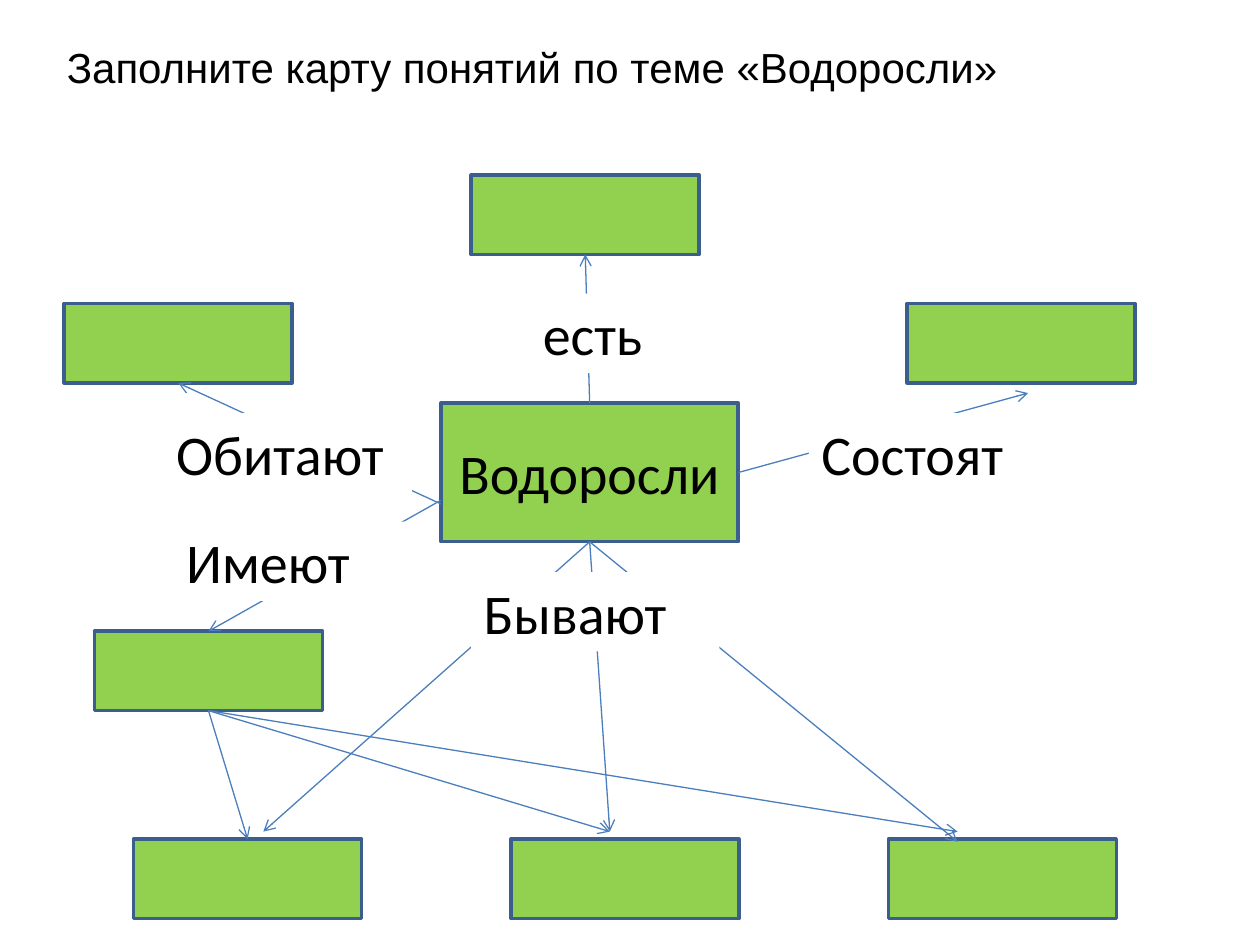
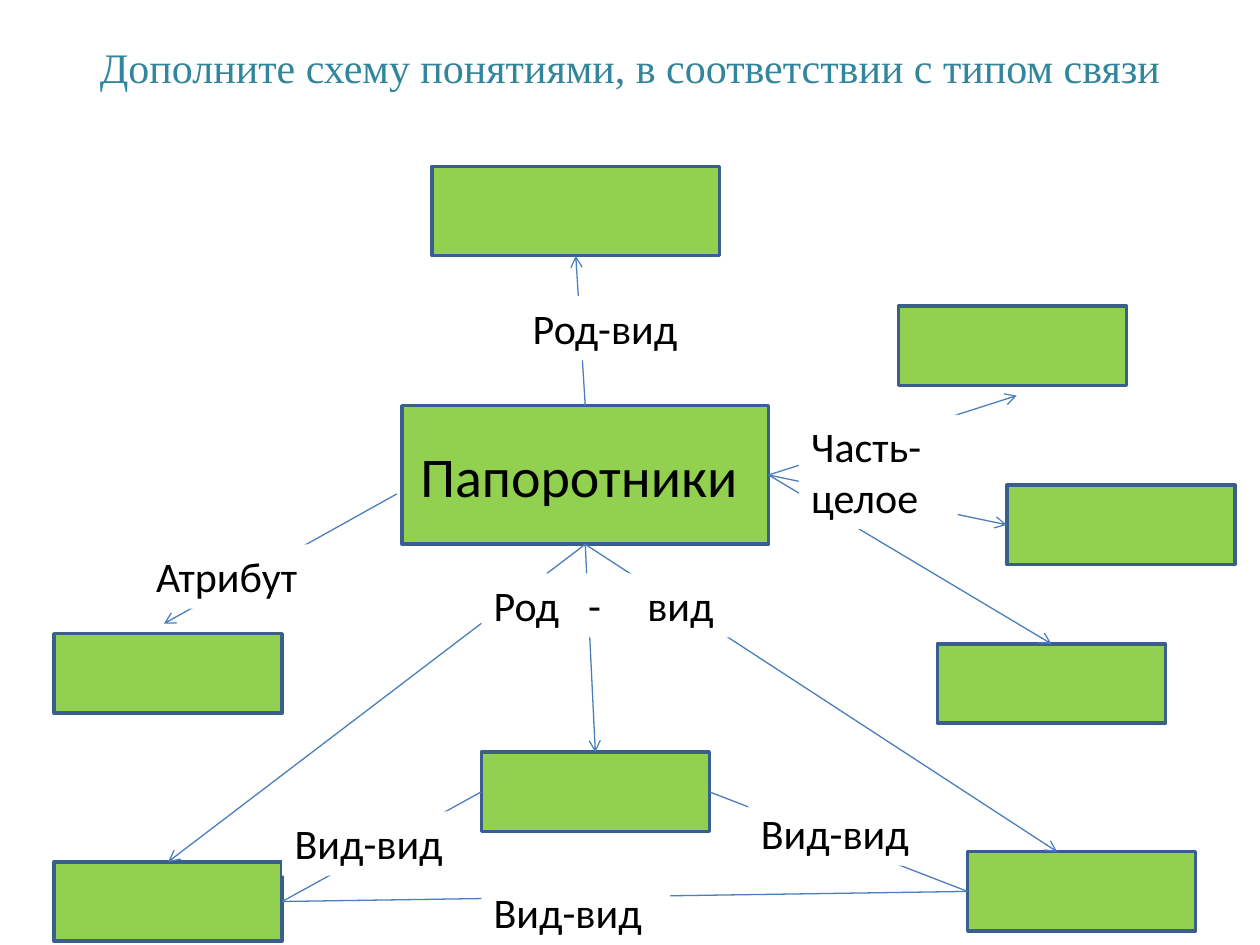
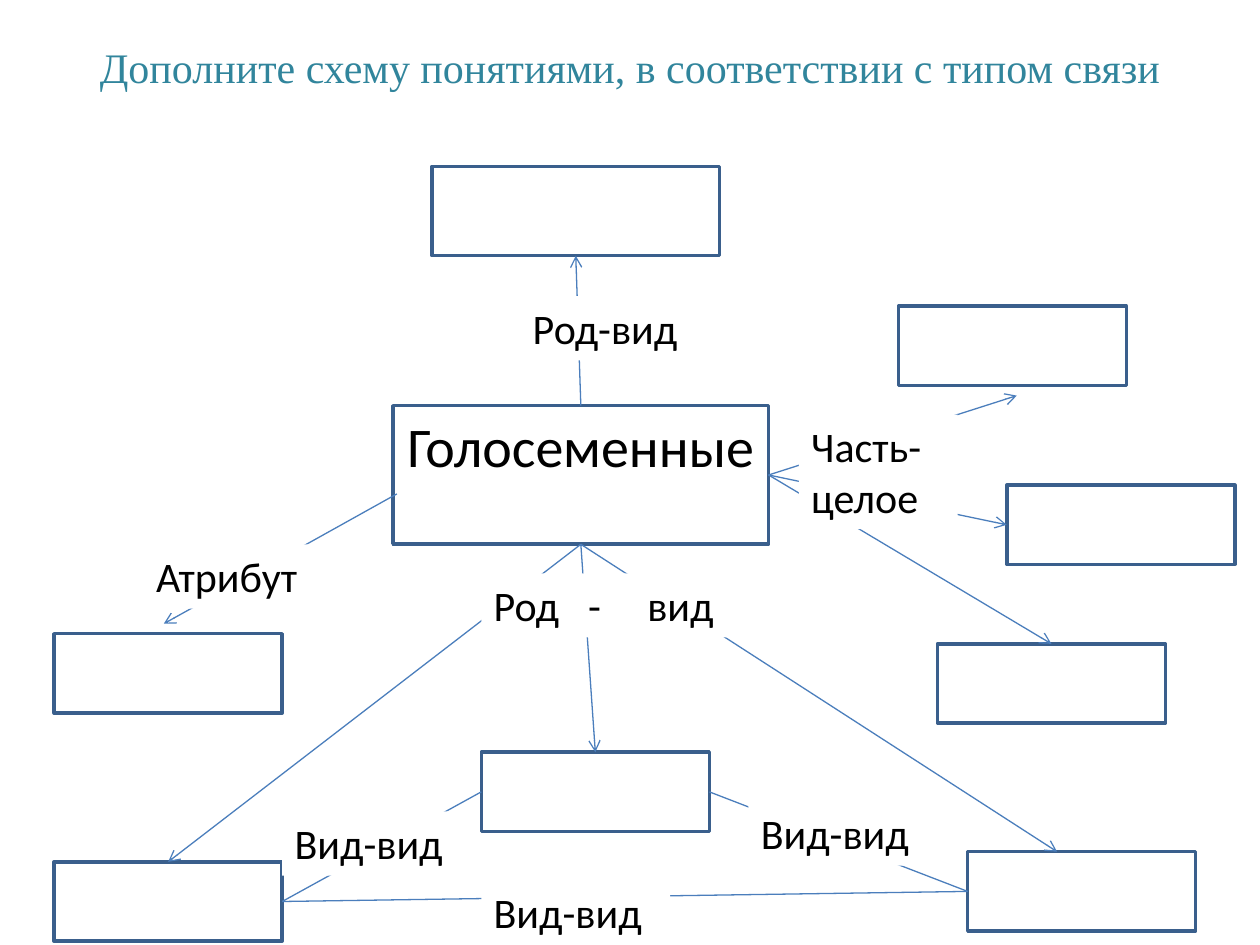
from lxml import etree
from pptx import Presentation
from pptx import util as u
from pptx.dml.color import RGBColor
from pptx.enum import shapes, text
from pptx.oxml import ns

COLORS = {"green": "92D050", "white": "FFFFFF", "border": "3A5F8C",
          "link": "4B7EBC", "black": "000000", "teal": "31859C"}
BOX = (1.81, 0.63)          # usual size of a concept box
TOP, LEFT, BOTTOM, RIGHT = range(4)
TAB_STOPS = (0.75, 1.22)    # gaps inside a spread-out label


def add_rectangle(slide, place, fill, border=None, words="", size=32,
                  align=text.PP_ALIGN.LEFT, anchor=text.MSO_ANCHOR.TOP):
    shape = slide.shapes.add_shape(shapes.MSO_SHAPE.RECTANGLE, *map(u.Inches, place))
    shape.shadow.inherit = False
    shape.fill.solid()
    shape.fill.fore_color.rgb = RGBColor.from_string(COLORS[fill])
    if border:
        shape.line.color.rgb = RGBColor.from_string(COLORS[border])
        shape.line.width = u.Pt(2)
    else:
        shape.line.fill.background()
    if words:
        shape.text_frame.word_wrap = True
        shape.text_frame.vertical_anchor = anchor
        paragraph = shape.text_frame.paragraphs[0]
        paragraph.alignment = align
        run = paragraph.add_run()
        run.text = words
        run.font.name, run.font.size = "Calibri", u.Pt(size)
        run.font.color.rgb = RGBColor.from_string(COLORS["black"])
        if "\t" in words:
            properties = paragraph._p.get_or_add_pPr()
            tabs = etree.SubElement(properties, ns.qn("a:tabLst"))
            for stop in TAB_STOPS:
                etree.SubElement(tabs, ns.qn("a:tab"), pos=str(u.Inches(stop)), algn="l")
    return shape


def add_link(slide, boxes, start, end, arrow=True):
    """An end is either a (box name, side) pair or an (x, y) point in inches."""
    joined = [isinstance(point[0], str) for point in (start, end)]
    first, last = [(0, 0) if is_joined else point
                   for is_joined, point in zip(joined, (start, end))]
    connector = slide.shapes.add_connector(
        shapes.MSO_CONNECTOR.STRAIGHT, *map(u.Inches, (*first, *last)))
    if joined[0]:
        connector.begin_connect(boxes[start[0]], start[1])
    if joined[1]:
        connector.end_connect(boxes[end[0]], end[1])
    connector.line.color.rgb = RGBColor.from_string(COLORS["link"])
    connector.line.width = u.Pt(0.75)
    if arrow:
        etree.SubElement(connector.line._get_or_add_ln(), ns.qn("a:tailEnd"), type="arrow")
    etree.SubElement(connector._element.spPr, ns.qn("a:effectLst"))


# Concept map of the first slide
algae_boxes = {"is": (3.74, 1.39, *BOX), "consist": (7.2, 2.41, *BOX),
               "live": (0.51, 2.41, *BOX), "have": (0.75, 5.01, *BOX)}
for column in range(3):
    algae_boxes[f"kind {column}"] = (1.06 + 2.995 * column, 6.66, *BOX)
algae_links = [
    (("hub", TOP), ("is", BOTTOM)),
    (("hub", BOTTOM), (2.09, 6.6)),
    (("hub", BOTTOM), (4.84, 6.6)),
    (("hub", BOTTOM), (7.6, 6.68)),
    ((3.5, 4), ("live", BOTTOM)),
    (("hub", RIGHT), (8.16, 3.12)),
    ((3.5, 3.97), ("have", TOP)),
    (("have", BOTTOM), (7.6, 6.6)),
    (("have", BOTTOM), (4.84, 6.6)),
    (("have", BOTTOM), ("kind 0", TOP)),
]
algae_labels = [(words, (left, top, 1.97, 0.63)) for words, left, top in (
    ("Бывают", 3.74, 4.54), ("есть", 4.21, 2.33), ("Обитают", 1.3, 3.28),
    ("Состоят", 6.42, 3.28), ("Имеют", 1.38, 4.14))]

# Relation map shared by the second and third slides
plant_boxes = {
    "genus": (3.43, 1.32, 2.28, 0.71), "attribute": (0.43, 5.03, *BOX),
    "part 0": (7.13, 2.43, *BOX), "part 1": (7.99, 3.85, *BOX),
    "part 2": (7.44, 5.11, *BOX), "species 0": (0.43, 6.84, *BOX),
    "species 1": (3.82, 5.97, *BOX), "species 2": (7.68, 6.76, *BOX)}
plant_links = [
    (("hub", TOP), ("genus", BOTTOM)),
    (("hub", BOTTOM), ("species 0", TOP)),
    (("hub", BOTTOM), ("species 1", TOP)),
    (("hub", BOTTOM), (8.39, 6.76)),
    (("hub", RIGHT), (8.07, 3.14)),
    (("hub", RIGHT), ("part 1", LEFT)),
    (("hub", RIGHT), ("part 2", TOP)),
    ((3.15, 3.92), (1.3, 4.95)),
    (("species 1", LEFT), ("species 0", RIGHT), False),
    (("species 1", RIGHT), ("species 2", LEFT), False),
    (("species 0", RIGHT), ("species 2", LEFT), False),
]
plant_labels = [
    ("Род-вид", (4.13, 2.35, 1.97, 0.51)),
    ("Атрибут", (1.14, 4.32, 1.97, 0.51)),
    ("Часть-целое", (6.34, 3.29, 1.26, 0.91)),
    ("Род\t-\tвид", (3.82, 4.55, 1.97, 0.51)),
] + [("Вид-вид", (left, top, 1.5, 0.51))
     for left, top in ((2.24, 6.44), (3.82, 6.99), (5.94, 6.36))]

algae_map = (algae_boxes, algae_links, algae_labels, 32)
plant_map = (plant_boxes, plant_links, plant_labels, 24)
algae_title = ("Заполните карту понятий по теме «Водоросли»", 8.11,
               "Arial", "black", text.PP_ALIGN.LEFT)
plant_title = ("Дополните схему понятиями, в соответствии с типом связи", 9.14,
               "Times New Roman", "teal", text.PP_ALIGN.CENTER)
MIDDLE, UPPER = text.MSO_ANCHOR.MIDDLE, text.MSO_ANCHOR.TOP
pages = [
    (algae_title, algae_map, "green", "Водоросли ", (3.5, 3.2, 2.36, 1.1), MIDDLE),
    (plant_title, plant_map, "green", "Папоротники ", (3.19, 3.22, 2.91, 1.1), MIDDLE),
    (plant_title, plant_map, "white", "Голосеменные", (3.12, 3.22, 2.98, 1.1), UPPER),
]

presentation = Presentation()
presentation.slide_width, presentation.slide_height = u.Inches(10), u.Inches(7.5)

for title_style, concept_map, fill, hub_words, hub_place, hub_anchor in pages:
    slide = presentation.slides.add_slide(presentation.slide_layouts[5])

    # Title
    words, width, font, color, align = title_style
    title = slide.shapes.title
    title.left, title.top = u.Inches(0.43), u.Inches(0.28)
    title.width, title.height = u.Inches(width), u.Inches(0.51)
    title.text_frame.word_wrap = True
    title.text_frame.auto_size = text.MSO_AUTO_SIZE.NONE
    title.text_frame.vertical_anchor = text.MSO_ANCHOR.TOP
    paragraph = title.text_frame.paragraphs[0]
    paragraph.alignment = align
    run = paragraph.add_run()
    run.text = words
    run.font.name, run.font.size = font, u.Pt(24)
    run.font.color.rgb = RGBColor.from_string(COLORS[color])

    # Central concept and the empty boxes around it
    places, links, labels, label_size = concept_map
    boxes = {"hub": add_rectangle(slide, hub_place, fill, "border", hub_words,
                                  align=text.PP_ALIGN.CENTER, anchor=hub_anchor)}
    for name, place in places.items():
        boxes[name] = add_rectangle(slide, place, fill, "border")

    # Links, with their labels on top
    for link in links:
        add_link(slide, boxes, *link)
    for words, place in labels:
        add_rectangle(slide, place, "white", words=words, size=label_size)

presentation.save("out.pptx")
